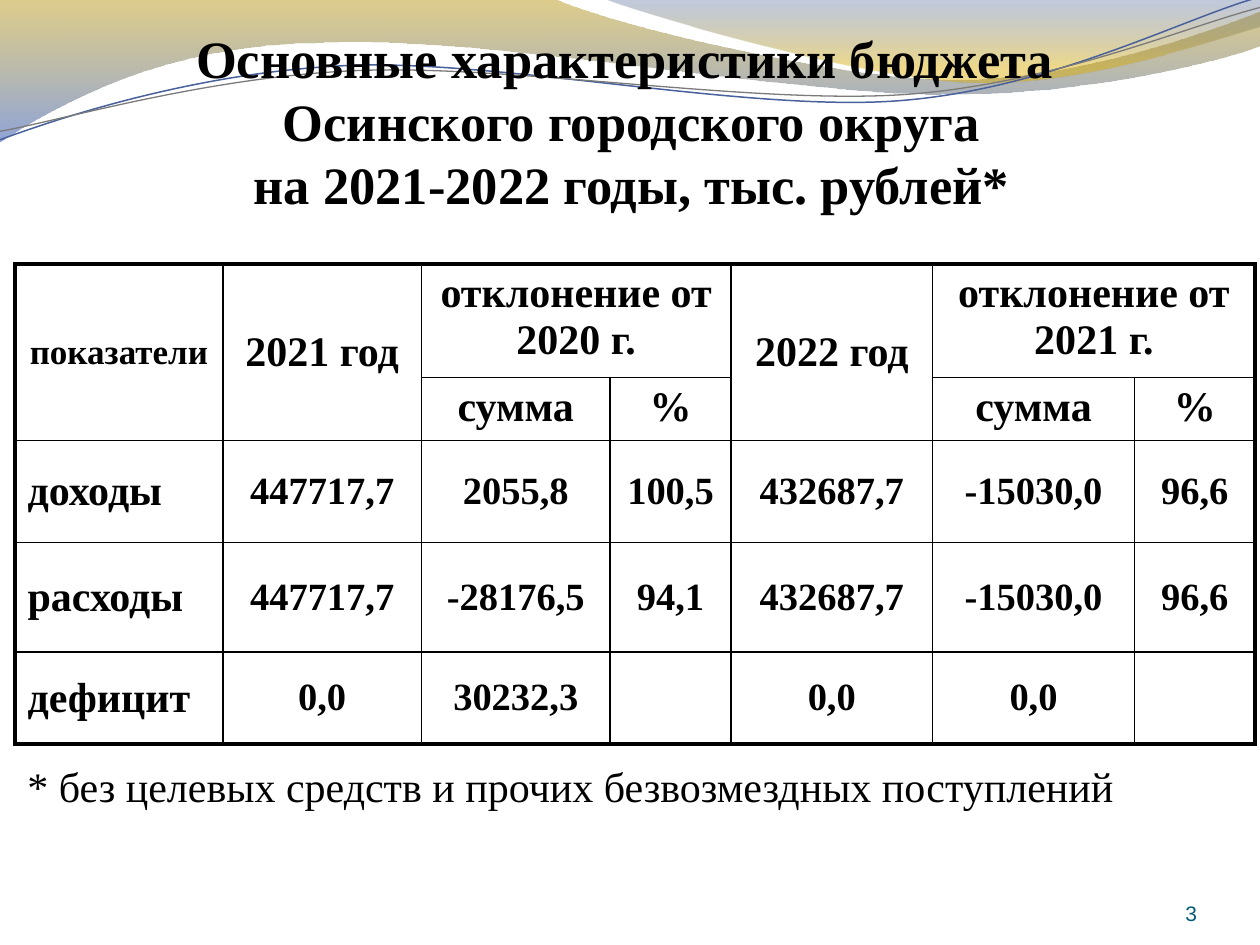
from lxml import etree
from pptx import Presentation
from pptx.dml.color import RGBColor
from pptx.enum.text import MSO_ANCHOR, MSO_AUTO_SIZE, PP_ALIGN
from pptx.oxml.ns import qn
from pptx.util import Pt

LEFT, CENTER, RIGHT = PP_ALIGN.LEFT, PP_ALIGN.CENTER, PP_ALIGN.RIGHT
TOP, MIDDLE, BOTTOM = MSO_ANCHOR.TOP, MSO_ANCHOR.MIDDLE, MSO_ANCHOR.BOTTOM
GROW = MSO_AUTO_SIZE.SHAPE_TO_FIT_TEXT

COLORS = {
    "text": "000000", "page": "045C75", "gold": "B69000", "blue": "3359B7",
    "navy": "324C8D", "amber": "D9AC00", "blue line": "48609B", "gray line": "7A7A7A",
}
SERIF, SANS = "Times New Roman", "Arial"
STRAND_ROTATION = 357.3
INNER_BORDER, OUTER_BORDER = 1, 2.25

# Outlines in points: a pair is a corner, six numbers are a cubic curve.
GOLD_WAVE = [
    (0, -0.7), (316.8, -0.7),
    (342.7, 12.2, 478.1, 45.4, 545.8, 45.4), (614.2, 45.4, 689.8, 18.7, 720, 6.5),
    (720.7, 25.9), (707.8, 31.7, 626.4, 54.7, 537.1, 54),
    (447.8, 54, 275, 20.2, 185, 24.5), (92.9, 25.2, 33.1, 59.8, -0.7, 81.4),
]
BLUE_WAVE = [
    (344.9, -0.7), (366.5, 7.9, 491, 44.6, 553.7, 46.8),
    (616.3, 49.7, 691.9, 23, 720, 15.1), (720, 0),
]
BLUE_STRAND = [
    (-1.4, 62.9), (33.8, 51.7, 114.1, 29.4, 199.8, 29.9),
    (284.9, 30.3, 425.8, 67.3, 512.4, 64.8), (599, 62.4, 676.5, 25.7, 720.2, 15.6),
]
GRAY_STRAND = [
    (-1.1, 58), (32.9, 53.8, 118.3, 32.5, 204.1, 33),
    (290.6, 33.4, 428.9, 63.1, 515.5, 61.4), (601.3, 59.6, 678.5, 30.1, 721.4, 21.3),
]

COLUMN_WIDTHS = [118.8, 113.4, 107.9, 69, 115.3, 115.3, 69]
ROW_HEIGHTS = [64.8, 36, 58.3, 62.6, 52.6]
BUDGET = [
    ["показатели", "2021 год", "отклонение от 2020 г.", "",
     "2022 год", "отклонение от 2021 г.", ""],
    ["", "", "сумма", "%", "", "сумма", "%"],
    ["доходы", "447717,7", "2055,8", "100,5", "432687,7", "-15030,0", "96,6"],
    ["расходы", "447717,7", "-28176,5", "94,1", "432687,7", "-15030,0", "96,6"],
    ["дефицит", "0,0", "30232,3", "", "0,0", "0,0", ""],
]
HEADER_ROWS = 2
MERGES = [(0, 0, 1, 0), (0, 1, 1, 1), (0, 2, 0, 3), (0, 4, 1, 4), (0, 5, 0, 6)]


class BudgetSlide:
    def __init__(self, slide):
        self.slide = slide

    def color(self, name):
        return RGBColor.from_string(COLORS[name])

    def format_text(self, frame, size, align, bold=False, font=SERIF, color="text"):
        for paragraph in frame.paragraphs:
            paragraph.alignment = align
            for run in paragraph.runs:
                run.font.name, run.font.size, run.font.bold = font, Pt(size), bold
                run.font.color.rgb = self.color(color)

    def text(self, words, box, size, align, anchor=TOP, margins=(7.2, 3.6, 7.2, 3.6), **style):
        frame = self.slide.shapes.add_textbox(*map(Pt, box)).text_frame
        frame.word_wrap = True
        frame.vertical_anchor = anchor
        (frame.margin_left, frame.margin_top,
         frame.margin_right, frame.margin_bottom) = map(Pt, margins)
        frame.text = words
        self.format_text(frame, size, align, **style)
        return frame

    def outline(self, parts, close):
        """Join the end points with lines, then bend those that have control points."""
        ends = [(Pt(part[-2]), Pt(part[-1])) for part in parts]
        builder = self.slide.shapes.build_freeform(*ends[0], scale=1.0)
        builder.add_line_segments(ends[1:], close=close)
        shape = builder.convert_to_shape()
        shape.shadow.inherit = False
        lines = list(shape._element.spPr.iter(qn("a:lnTo")))
        for line, part in zip(lines, parts[1:]):
            if len(part) == 6:
                curve = etree.Element(qn("a:cubicBezTo"))
                for x, y in zip(part[::2], part[1::2]):
                    etree.SubElement(curve, qn("a:pt"), x=str(Pt(x) - shape.left),
                                     y=str(Pt(y) - shape.top))
                line.getparent().replace(line, curve)
        return shape

    def wave(self, parts, stops):
        """Fill an outline from top to bottom; a stop is (position, color, opacity %)."""
        shape = self.outline(parts, close=True)
        shape.line.fill.background()
        shape.fill.gradient()
        shape.fill.gradient_angle = 270
        for stop, (position, color, _) in zip(shape.fill.gradient_stops, stops):
            stop.position = position
            stop.color.rgb = self.color(color)
        tints = shape._element.spPr.iter(qn("a:srgbClr"))
        for tint, (_, _, opacity) in zip(list(tints), stops):
            etree.SubElement(tint, qn("a:alpha"), val=str(opacity * 1000))

    def strand(self, parts, color, width):
        shape = self.outline(parts, close=False)
        shape.rotation = STRAND_ROTATION
        shape.fill.background()
        shape.line.color.rgb = self.color(color)
        shape.line.width = Pt(width)

    def borders(self, cell, widths):
        """Add the left, right, top and bottom borders ahead of the cell's fill."""
        properties = cell._tc.get_or_add_tcPr()
        for index, (side, width) in enumerate(zip("LRTB", widths)):
            border = etree.Element(qn(f"a:ln{side}"), w=str(Pt(width)))
            fill = etree.SubElement(border, qn("a:solidFill"))
            etree.SubElement(fill, qn("a:srgbClr"), val=COLORS["text"])
            properties.insert(index, border)

    def table(self, rows, left, top):
        last_row, last_column = len(rows) - 1, len(rows[0]) - 1
        table = self.slide.shapes.add_table(
            len(rows), len(rows[0]), Pt(left), Pt(top),
            Pt(sum(COLUMN_WIDTHS)), Pt(sum(ROW_HEIGHTS))).table
        table.first_row = table.horz_banding = False
        for column, width in zip(table.columns, COLUMN_WIDTHS):
            column.width = Pt(width)
        for row, height in zip(table.rows, ROW_HEIGHTS):
            row.height = Pt(height)
        for r1, c1, r2, c2 in MERGES:
            table.cell(r1, c1).merge(table.cell(r2, c2))
        for r, row in enumerate(rows):
            for c, words in enumerate(row):
                cell = table.cell(r, c)
                right = c + (cell.span_width if cell.is_merge_origin else 1) - 1
                header = r < HEADER_ROWS
                cell.fill.background()
                outer = (c == 0, right == last_column, r == 0, r == last_row)
                self.borders(cell, [OUTER_BORDER if edge else INNER_BORDER for edge in outer])
                one_row_header = header and cell.span_height == 1
                cell.vertical_anchor = TOP if one_row_header else MIDDLE
                if words:
                    cell.text_frame.text = words
                    size = 20 if r == c == 0 else 24 if header or c == 0 else 22
                    align = LEFT if c == 0 and not header else CENTER
                    self.format_text(cell.text_frame, size, align, bold=True)


def main():
    presentation = Presentation()
    presentation.slide_width, presentation.slide_height = Pt(720), Pt(540)
    page = BudgetSlide(presentation.slides.add_slide(presentation.slide_layouts[6]))

    page.wave(GOLD_WAVE, [(0, "gold", 45), (1, "blue", 55)])
    page.wave(BLUE_WAVE, [(0, "navy", 30), (0.8, "amber", 45)])
    page.strand(BLUE_STRAND, "blue line", 0.85)
    page.strand(GRAY_STRAND, "gray line", 0.75)

    title = page.text(
        "Основные характеристики бюджета \vОсинского городского округа\v"
        "на 2021-2022 годы, тыс. рублей*",
        (36.9, 20.7, 648, 102.2), 30, CENTER, BOTTOM, (0, 3.6, 0, 0), bold=True)
    title.paragraphs[0].line_spacing = Pt(36)

    page.table(BUDGET, 8.6, 150.8)
    page.text("3", (624.2, 500.4, 59.8, 28.8), 12, RIGHT, BOTTOM, (0, 0, 0, 0),
              font=SANS, color="page")
    footnote = page.text("* без целевых средств и прочих безвозмездных поступлений",
                         (8.6, 430.9, 640.8, 36.7), 24, LEFT)
    footnote.auto_size = GROW

    presentation.save("out.pptx")


if __name__ == "__main__":
    main()
